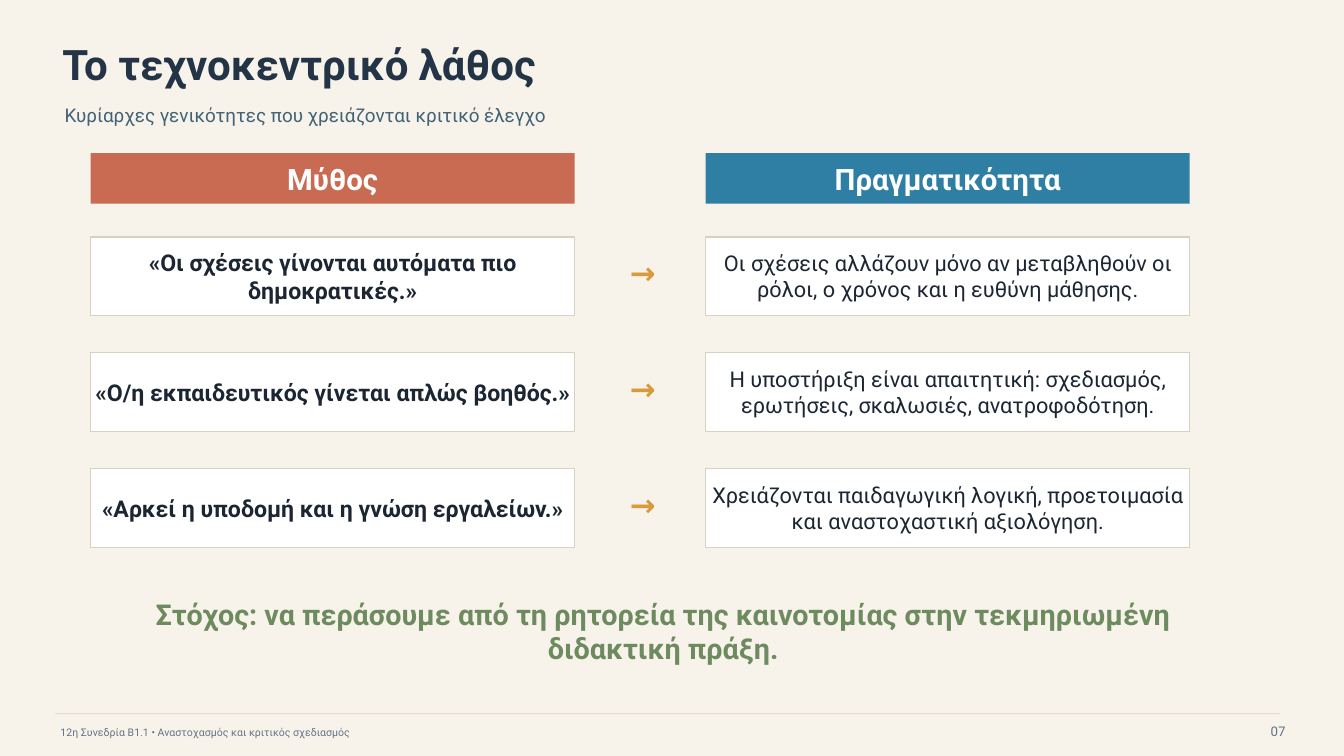
from dataclasses import dataclass

from lxml.etree import SubElement
from pptx import Presentation
from pptx.dml.color import RGBColor
from pptx.enum.shapes import MSO_CONNECTOR, MSO_SHAPE
from pptx.enum.text import MSO_ANCHOR, PP_ALIGN
from pptx.oxml.ns import qn
from pptx.util import Pt

TITLE = "Το τεχνοκεντρικό λάθος"
SUBTITLE = "Κυρίαρχες γενικότητες που χρειάζονται κριτικό έλεγχο"
HEADS = ("Μύθος", "Πραγματικότητα")
PAIRS = [
    ("«Οι σχέσεις γίνονται αυτόματα πιο δημοκρατικές.»",
     "Οι σχέσεις αλλάζουν μόνο αν μεταβληθούν οι ρόλοι, ο χρόνος και η ευθύνη μάθησης."),
    ("«Ο/η εκπαιδευτικός γίνεται απλώς βοηθός.»",
     "Η υποστήριξη είναι απαιτητική: σχεδιασμός, ερωτήσεις, σκαλωσιές, ανατροφοδότηση."),
    ("«Αρκεί η υποδομή και η γνώση εργαλείων.»",
     "Χρειάζονται παιδαγωγική λογική, προετοιμασία και αναστοχαστική αξιολόγηση."),
]
GOAL = "Στόχος: να περάσουμε από τη ρητορεία της καινοτομίας στην τεκμηριωμένη διδακτική πράξη."
FOOTER = "12η Συνεδρία Β1.1 • Αναστοχασμός και κριτικός σχεδιασμός"
NUMBER = "07"


@dataclass(frozen=True)
class Style:
    size: float
    color: str
    bold: bool = False
    align: PP_ALIGN = PP_ALIGN.CENTER


@dataclass(frozen=True)
class Theme:
    font: str = "Roboto"
    back: str = "F7F3EA"
    card: str = "FFFFFF"
    edge: str = "D8D0C1"
    fills: tuple = ("C86B52", "2E7FA3")
    title: Style = Style(30, "243447", True, PP_ALIGN.LEFT)
    sub: Style = Style(13.5, "426276", align=PP_ALIGN.LEFT)
    head: Style = Style(21, "FFFFFF", True)
    cells: tuple = (Style(16.5, "1C2633", True), Style(15.5, "1C2633"))
    arrow: Style = Style(22, "D89A3D", True)
    goal: Style = Style(20.5, "6D8B5F", True)
    foot: Style = Style(7.5, "657384", align=PP_ALIGN.LEFT)
    number: Style = Style(9.5, "657384", align=PP_ALIGN.RIGHT)


THEME = Theme()
PX = 9144  # 100 px to the inch
COLS, COL_W = (90, 700), 480
HEAD_Y, HEAD_H = 152, 50
ROW_Y, ROW_H, ROW_STEP = 235, 78, 115
ARROW_X, ARROW_W, ARROW_H, ARROW_DROP = 610, 55, 34, 18


def scale(*nums):
    return [n * PX for n in nums]


def rgb(code):
    return RGBColor.from_string(code)


def write(shape, text, style):
    frame = shape.text_frame
    frame.word_wrap = True
    frame.vertical_anchor = MSO_ANCHOR.MIDDLE
    frame.margin_left = frame.margin_right = 0
    frame.margin_top = frame.margin_bottom = 0
    para = frame.paragraphs[0]
    para.text = text
    para.alignment = style.align
    font = para.font
    font.name, font.size, font.bold = THEME.font, Pt(style.size), style.bold
    font.color.rgb = rgb(style.color)


def label(slide, box, text, style):
    write(slide.shapes.add_textbox(*scale(*box)), text, style)


def panel(slide, box, text, style, fill, edge=None):
    shape = slide.shapes.add_shape(MSO_SHAPE.RECTANGLE, *scale(*box))
    shape.shadow.inherit = False
    shape.fill.solid()
    shape.fill.fore_color.rgb = rgb(fill)
    if edge:
        shape.line.color.rgb = rgb(edge)
        shape.line.width = Pt(1)
    else:
        shape.line.fill.background()
    write(shape, text, style)


def rule(slide, left, right, y):
    """Draw the thin, slightly clear line above the footer."""
    line = slide.shapes.add_connector(MSO_CONNECTOR.STRAIGHT, *scale(left, y, right, y))
    line.line.color.rgb = rgb(THEME.edge)
    line.line.width = Pt(0.5)
    props = line._element.spPr
    tint = next(props.iter(qn("a:srgbClr")))
    SubElement(tint, qn("a:alpha"), val="90000")
    SubElement(props, qn("a:effectLst"))


def main():
    deck = Presentation()
    deck.slide_width, deck.slide_height = scale(1333, 750)
    slide = deck.slides.add_slide(deck.slide_layouts[6])
    slide.background.fill.solid()
    slide.background.fill.fore_color.rgb = rgb(THEME.back)

    label(slide, (62, 36, 990, 55), TITLE, THEME.title)
    label(slide, (64, 96, 1020, 36), SUBTITLE, THEME.sub)
    rule(slide, 55, 1270, 708)
    label(slide, (60, 717, 870, 18), FOOTER, THEME.foot)
    label(slide, (1215, 711, 60, 28), NUMBER, THEME.number)

    for x, text, fill in zip(COLS, HEADS, THEME.fills):
        panel(slide, (x, HEAD_Y, COL_W, HEAD_H), text, THEME.head, fill)
    for row, pair in enumerate(PAIRS):
        y = ROW_Y + row * ROW_STEP
        for x, text, style in zip(COLS, pair, THEME.cells):
            panel(slide, (x, y, COL_W, ROW_H), text, style, THEME.card, THEME.edge)
        label(slide, (ARROW_X, y + ARROW_DROP, ARROW_W, ARROW_H), "→", THEME.arrow)
    label(slide, (128, 602, 1060, 48), GOAL, THEME.goal)

    deck.save("out.pptx")


if __name__ == "__main__":
    main()
